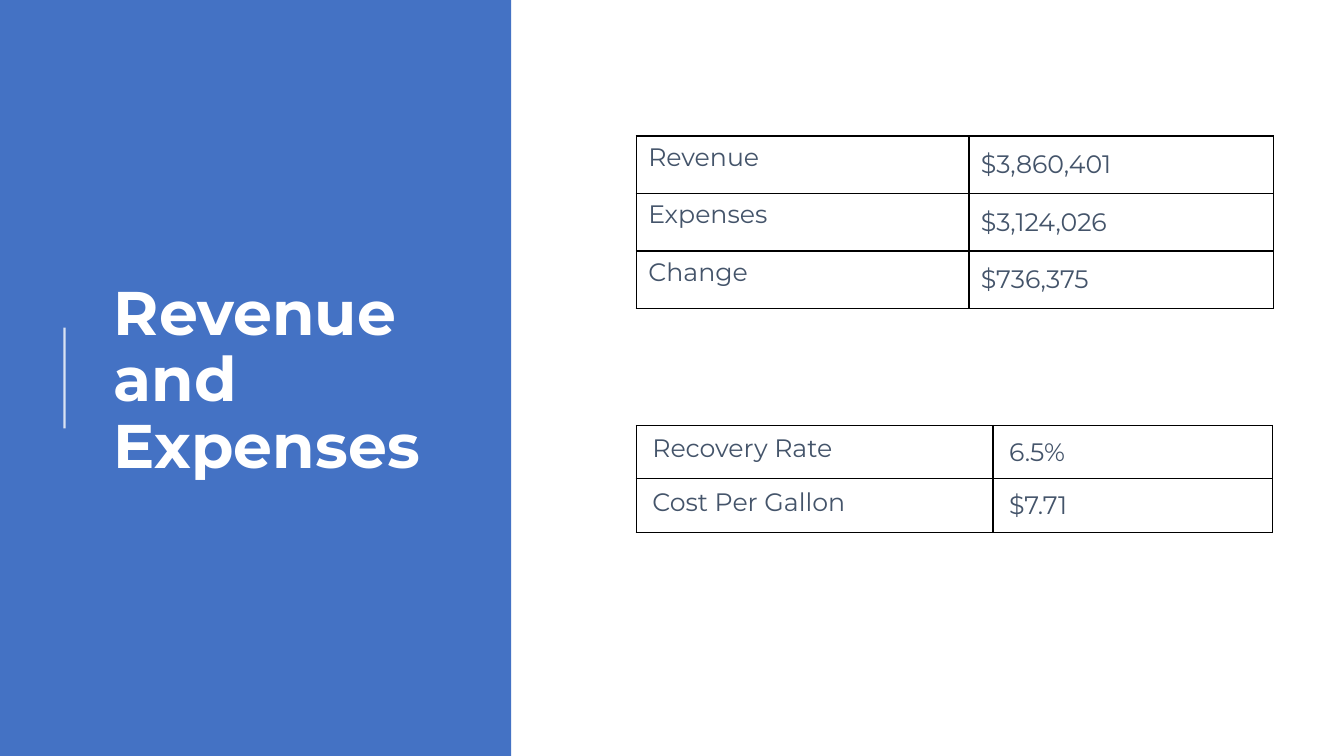
from lxml import etree
from pptx import Presentation
from pptx.dml.color import RGBColor
from pptx.enum import shapes, text
from pptx.oxml import ns
from pptx.util import Inches, Pt

COLORS = {"panel": "4472C4", "white": "FFFFFF", "ink": "44546A", "border": "000000"}
FONT = "Montserrat"
NO_STYLE = "{2D5ABB26-0587-4C30-8999-92F81FD0307C}"


def style_run(run, size, color, bold=False):
    run.font.name = FONT
    run.font.size = Pt(size)
    run.font.bold = bold
    run.font.color.rgb = RGBColor.from_string(COLORS[color])


def add_borders(cell, sides):
    """Draw 1 pt lines on the given sides, named in the order L, R, T, B."""
    properties = cell._tc.get_or_add_tcPr()
    for side in sides:
        line = etree.SubElement(properties, ns.qn(f"a:ln{side}"), w=str(Pt(1)))
        fill = etree.SubElement(line, ns.qn("a:solidFill"))
        etree.SubElement(fill, ns.qn("a:srgbClr"), val=COLORS["border"])


prs = Presentation()
prs.slide_width, prs.slide_height = Inches(13.33), Inches(7.5)
slide = prs.slides.add_slide(prs.slide_layouts[5])

# Blue side panel with a thin accent line
panel = slide.shapes.add_shape(
    shapes.MSO_SHAPE.RECTANGLE, 0, 0, Inches(5.07), prs.slide_height)
panel.shadow.inherit = False
panel.fill.solid()
panel.fill.fore_color.rgb = RGBColor.from_string(COLORS["panel"])
panel.line.fill.background()

accent = slide.shapes.add_connector(
    shapes.MSO_CONNECTOR.STRAIGHT, Inches(0.64), Inches(4.25), Inches(0.64), Inches(3.25))
accent.line.width = Pt(1.5)
accent.line.color.rgb = RGBColor.from_string(COLORS["white"])
accent_color = accent._element.spPr.find(".//" + ns.qn("a:srgbClr"))
etree.SubElement(accent_color, ns.qn("a:alpha"), val="80000")
etree.SubElement(accent._element.spPr, ns.qn("a:effectLst"))

# Each table: top, column widths, row heights, cell margins (x, y), rows.
# Rows without text are unruled spacers around the figures.
SPACER = ("", "")
tables = [
    (0.7, (3.3, 3.02), (0.65, 0.57, 0.57, 0.57, 0.65), (0.12, 0.06),
     [SPACER, ("Revenue", "$3,860,401"), ("Expenses", "$3,124,026"),
      ("Change", "$736,375"), SPACER]),
    (3.39, (3.54, 2.77), (0.83, 0.53, 0.53), (0.16, 0.08),
     [SPACER, ("Recovery Rate", "6.5%"), ("Cost Per Gallon", "$7.71")]),
]
for top, widths, heights, (margin_x, margin_y), rows in tables:
    frame = slide.shapes.add_table(
        len(rows), len(widths), Inches(6.31), Inches(top),
        Inches(sum(widths)), Inches(sum(heights)))
    figures = frame.table
    figures.first_row = figures.horz_banding = False
    figures._tbl.tblPr.find(ns.qn("a:tableStyleId")).text = NO_STYLE
    for column, width in zip(figures.columns, widths):
        column.width = Inches(width)
    for r, (height, values) in enumerate(zip(heights, rows)):
        figures.rows[r].height = Inches(height)
        for c, value in enumerate(values):
            cell = figures.cell(r, c)
            if value:
                add_borders(cell, "LRTB")
                cell.margin_left = cell.margin_right = Inches(margin_x)
                cell.margin_top = cell.margin_bottom = Inches(margin_y)
                if c == 1:
                    cell.vertical_anchor = text.MSO_ANCHOR.MIDDLE
                run = cell.text_frame.paragraphs[0].add_run()
                run.text = value
                style_run(run, 18, "ink")
            else:
                add_borders(cell, "B" if r == 0 else "T")
            cell.fill.solid()
            cell.fill.fore_color.rgb = RGBColor.from_string(COLORS["white"])

# Title, brought in front of the panel
title = slide.shapes.title
title.left, title.top = Inches(1.03), Inches(0.78)
title.width, title.height = Inches(3.69), Inches(6.02)
title.text_frame.word_wrap = True
title.text_frame.auto_size = text.MSO_AUTO_SIZE.NONE
title.text_frame.vertical_anchor = text.MSO_ANCHOR.MIDDLE
heading = title.text_frame.paragraphs[0]
heading.alignment = text.PP_ALIGN.LEFT
heading.line_spacing = 0.9
run = heading.add_run()
run.text = "Revenue and Expenses"
style_run(run, 44, "white", bold=True)
slide.shapes._spTree.append(title._element)

prs.save("out.pptx")
